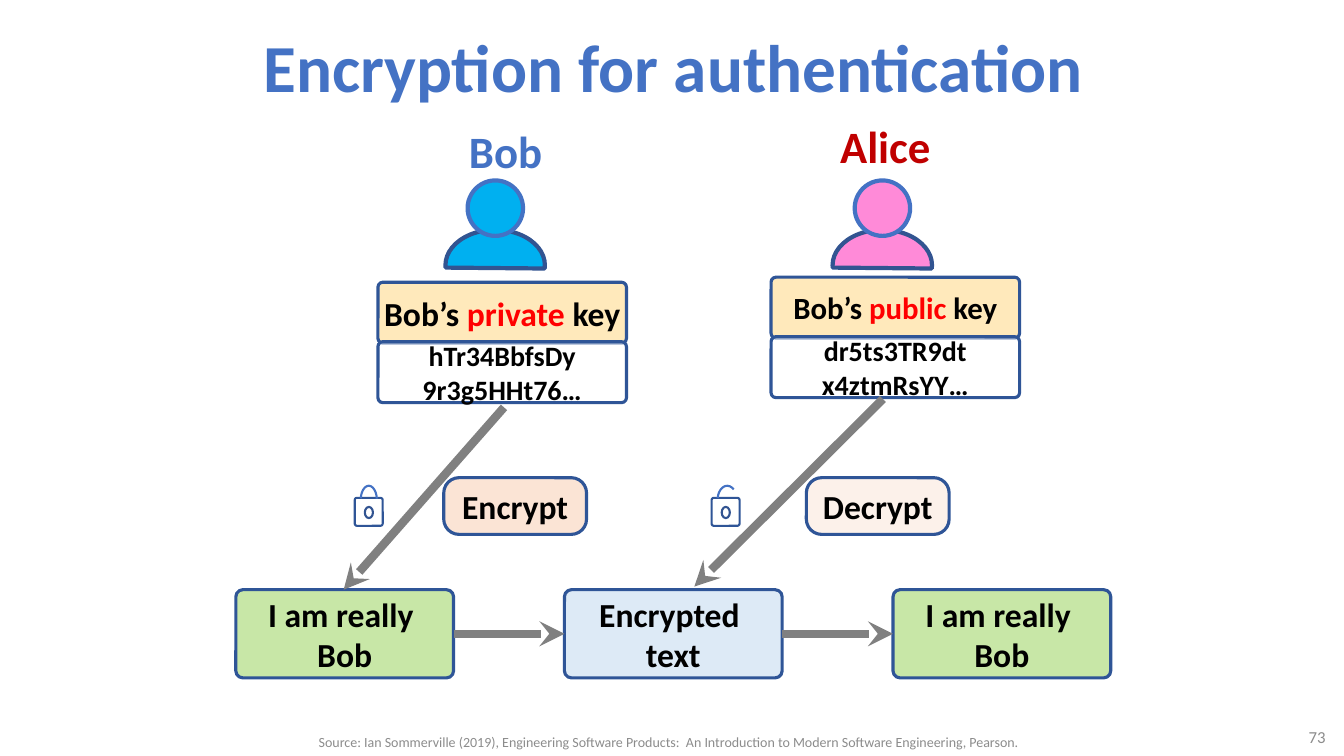
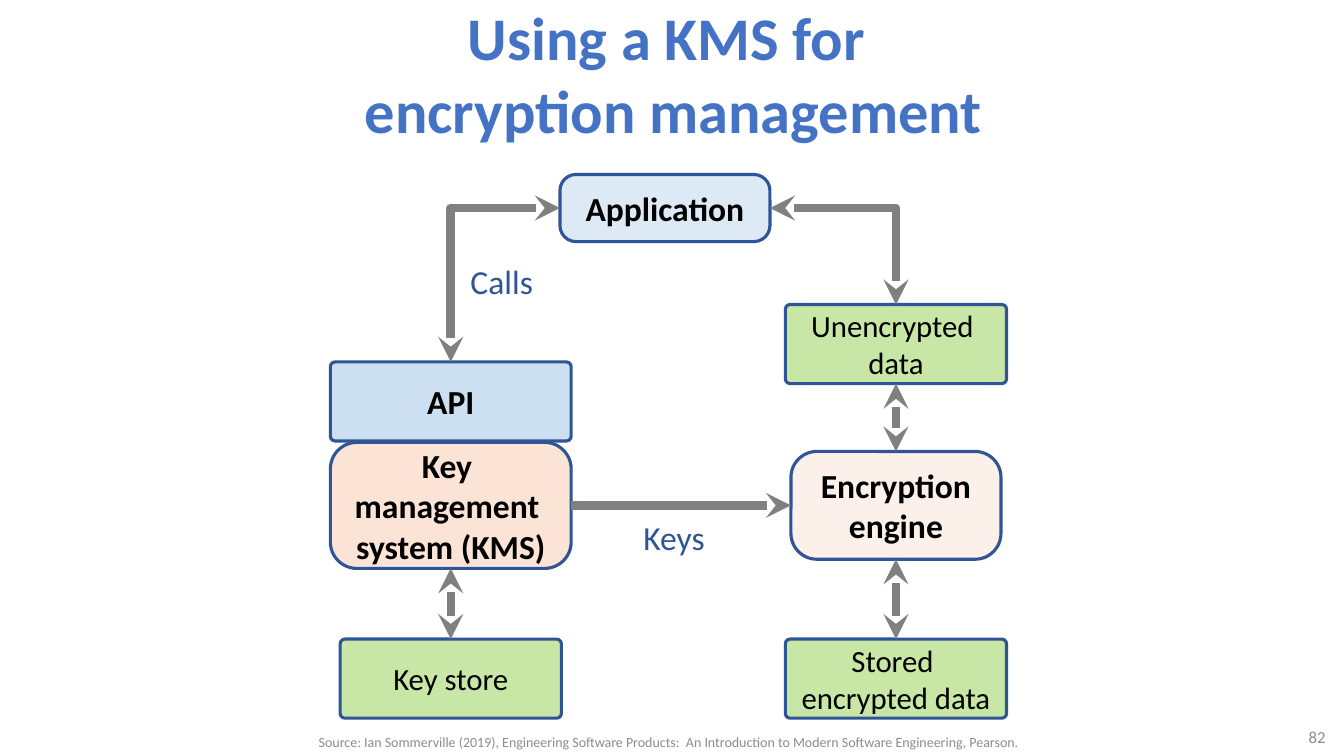
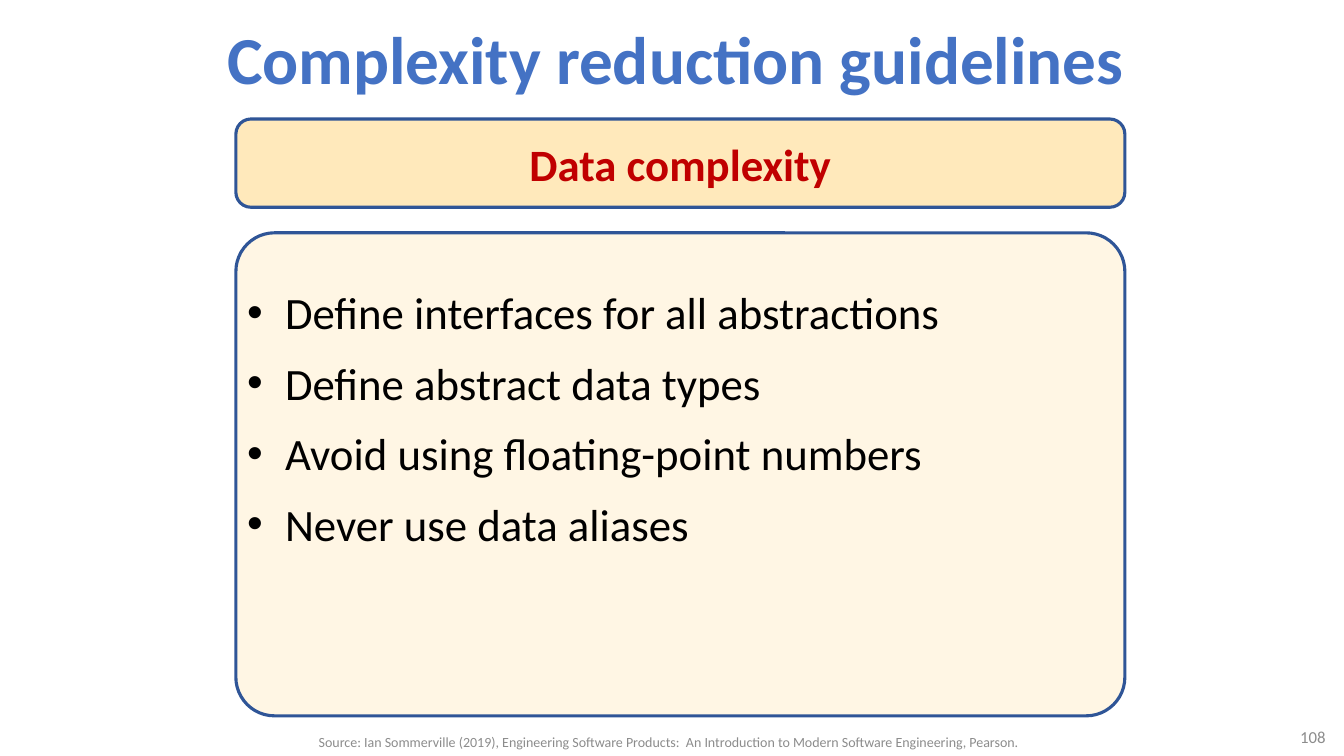
from lxml.etree import SubElement
from pptx import Presentation
from pptx.dml.color import RGBColor
from pptx.enum.shapes import MSO_CONNECTOR, MSO_SHAPE
from pptx.enum.text import MSO_ANCHOR, MSO_AUTO_SIZE, PP_ALIGN
from pptx.oxml.ns import qn
from pptx.util import Pt

FONT = "Calibri"
BLACK = RGBColor(0x00, 0x00, 0x00)
WHITE = RGBColor(0xFF, 0xFF, 0xFF)
GRAY = RGBColor(0x80, 0x80, 0x80)
FOOTER_GRAY = RGBColor(0x8C, 0x8C, 0x8C)
BLUE = RGBColor(0x44, 0x72, 0xC4)
NAVY = RGBColor(0x2F, 0x55, 0x97)
OUTLINE_BLUE = RGBColor(0x32, 0x54, 0x91)
RED = RGBColor(0xFF, 0x00, 0x00)
DARK_RED = RGBColor(0xC0, 0x00, 0x00)
GREEN = RGBColor(0x92, 0xD0, 0x50)
PALE_BLUE = RGBColor(0xBD, 0xD7, 0xEE)
SKY_BLUE = RGBColor(0x9D, 0xC3, 0xE6)
SALMON = RGBColor(0xF8, 0xCB, 0xAD)
PEACH = RGBColor(0xFB, 0xE5, 0xD6)
AMBER = RGBColor(0xFF, 0xD5, 0x79)
CYAN = RGBColor(0x00, 0xB0, 0xF0)
PINK = RGBColor(0xFF, 0x8A, 0xD8)

SOURCE = ("Source: Ian Sommerville (2019), Engineering Software Products:  "
          "An Introduction to Modern Software Engineering, Pearson.")
TOP, LEFT, BOTTOM, RIGHT = range(4)


class Deck:
    """Holds the shared style and the slide being built."""

    def __init__(self):
        self.prs = Presentation()
        self.prs.slide_width, self.prs.slide_height = Pt(960), Pt(540)
        self.shapes = None

    def new_slide(self, title, number, area, size=48):
        slide = self.prs.slides.add_slide(self.prs.slide_layouts[5])
        self.shapes = slide.shapes
        heading = slide.shapes.title
        heading.left, heading.top, heading.width, heading.height = map(Pt, area)
        heading.text_frame.auto_size = MSO_AUTO_SIZE.NONE
        heading.text_frame.vertical_anchor = MSO_ANCHOR.MIDDLE
        self.add_text(heading.text_frame, [title], size, BLUE, True)
        self.label(str(number), (878, 517, 76, 19), 12, FOOTER_GRAY,
                   align=PP_ALIGN.RIGHT, anchor=MSO_ANCHOR.MIDDLE)
        self.label(SOURCE, (168.5, 520, 618, 20), 10, FOOTER_GRAY,
                   anchor=MSO_ANCHOR.MIDDLE)

    def add_text(self, frame, paragraphs, size, color, bold=False,
                 align=PP_ALIGN.CENTER):
        """Each paragraph is a string or a list of (string, color) runs."""
        for index, content in enumerate(paragraphs):
            paragraph = frame.add_paragraph() if index else frame.paragraphs[0]
            paragraph.alignment = align
            runs = [(content, color)] if isinstance(content, str) else content
            for words, run_color in runs:
                for row, line in enumerate(words.split("\n")):
                    if row:
                        paragraph.add_line_break()
                    run = paragraph.add_run()
                    run.text = line
                    run.font.name, run.font.size = FONT, Pt(size)
                    run.font.bold = bold
                    run.font.color.rgb = run_color

    def label(self, words, area, size, color, bold=False,
              align=PP_ALIGN.CENTER, anchor=MSO_ANCHOR.TOP):
        frame = self.shapes.add_textbox(*map(Pt, area)).text_frame
        frame.word_wrap = True
        frame.vertical_anchor = anchor
        self.add_text(frame, [words], size, color, bold, align)

    def figure(self, kind, area, fill, line, weight, adjust=(), opacity=100,
               parent=None):
        """Adds a preset shape to the slide or to the parent group."""
        shape = (parent or self.shapes).add_shape(kind, *map(Pt, area))
        shape.shadow.inherit = False
        for index, value in enumerate(adjust):
            shape.adjustments[index] = value
        if fill is None:
            shape.fill.background()
        else:
            shape.fill.solid()
            shape.fill.fore_color.rgb = fill
            if opacity < 100:
                tint = shape.element.spPr.find(qn("a:solidFill"))[0]
                SubElement(tint, qn("a:alpha"), val=str(opacity * 1000))
        shape.line.color.rgb = line
        shape.line.width = Pt(weight)
        return shape

    def box(self, paragraphs, area, fill, size=24, bold=True, color=BLACK,
            corner=0.08, opacity=50, align=PP_ALIGN.CENTER):
        shape = self.figure(MSO_SHAPE.ROUNDED_RECTANGLE, area, fill, NAVY,
                            2.25, [corner], opacity)
        frame = shape.text_frame
        frame.margin_left = frame.margin_right = 0
        frame.margin_top = frame.margin_bottom = 0
        frame.word_wrap = False
        frame.vertical_anchor = MSO_ANCHOR.MIDDLE
        self.add_text(frame, paragraphs, size, color, bold, align)
        return shape

    def bullet_box(self, items, area, fill, size, top_margin):
        frame = self.box(items, area, fill, size, False, opacity=20,
                         align=PP_ALIGN.LEFT).text_frame
        frame.word_wrap = True
        frame.vertical_anchor = MSO_ANCHOR.TOP
        frame.margin_top = Pt(top_margin)
        for paragraph in frame.paragraphs:
            props = paragraph._p.get_or_add_pPr()
            props.set("marL", str(Pt(27)))
            props.set("indent", str(Pt(-27)))
            SubElement(props, qn("a:buFont"), typeface="Arial")
            SubElement(props, qn("a:buChar"), char="•")
            paragraph.space_after = Pt(12)

    def arrow(self, start=(0, 0), end=(0, 0), kind=MSO_CONNECTOR.STRAIGHT,
              both=False):
        connector = self.shapes.add_connector(kind, *map(Pt, (*start, *end)))
        connector.line.color.rgb = GRAY
        connector.line.width = Pt(6)
        line = connector.element.spPr.find(qn("a:ln"))
        if both:
            SubElement(line, qn("a:headEnd"), type="stealth")
        SubElement(line, qn("a:tailEnd"), type="stealth")
        SubElement(connector.element.spPr, qn("a:effectLst"))
        return connector

    def link(self, origin, origin_side, target, target_side, both=False,
             bent=False):
        """Joins two boxes by an arrow glued to the given sides."""
        kind = MSO_CONNECTOR.ELBOW if bent else MSO_CONNECTOR.STRAIGHT
        connector = self.arrow(kind=kind, both=both)
        connector.begin_connect(origin, origin_side)
        connector.end_connect(target, target_side)
        if bent:
            geometry = connector.element.spPr.find(qn("a:prstGeom"))
            geometry.set("prst", "bentConnector2")

    def person(self, x, y, fill):
        group = self.shapes.add_group_shape().shapes
        self.figure(MSO_SHAPE.CHORD, (x, y + 35.3, 71, 50.4), fill,
                    OUTLINE_BLUE, 3, (106.27, 2.36), parent=group)
        self.figure(MSO_SHAPE.OVAL, (x + 15.8, y, 39.6, 39.6), fill, BLUE, 3,
                    parent=group)

    def padlock(self, x, y, shackle_width, shackle_end):
        group = self.shapes.add_group_shape().shapes
        self.figure(MSO_SHAPE.ROUNDED_RECTANGLE, (x, y + 8.6, 20, 20), WHITE,
                    NAVY, 1.5, [0.08], parent=group)
        self.figure(MSO_SHAPE.OVAL, (x + 7.2, y + 15.1, 5.8, 8), WHITE,
                    OUTLINE_BLUE, 1.5, parent=group)
        self.figure(MSO_SHAPE.ARC, (x + 4.3, y, shackle_width, 20), None, BLUE,
                    1.5, (114.46, shackle_end), parent=group)


def authentication_slide(deck):
    deck.new_slide("Encryption for authentication", 73, (157, 9.4, 648, 75))

    owners = [
        ("Bob", BLUE, (247.7, 85), 318.2, CYAN, (270, 201.6),
         "private", 24, "hTr34BbfsDy\n9r3g5HHt76…"),
        ("Alice", DARK_RED, (519, 81.4), 594.7, PINK, (550.8, 198),
         "public", 22, "dr5ts3TR9dt\nx4ztmRsYY…"),
    ]
    for (name, color, name_at, person_x, fill, (key_x, key_y),
         access, key_size, key) in owners:
        deck.label(name, (*name_at, 227, 46), 32, color, True)
        deck.person(person_x, 128.9, fill)
        heading = [("Bob’s ", BLACK), (access, RED), (" key", BLACK)]
        deck.box([heading], (key_x, key_y, 177.5, 43.5), AMBER, key_size)
        deck.box([key], (key_x, key_y + 42.5, 177.5, 43.5), WHITE, 20)

    steps = [("Encrypt", 317, SALMON), ("Decrypt", 576, PEACH)]
    for step, x, fill in steps:
        deck.box([step], (x, 341.2, 102, 40.5), fill, corner=0.27)
    deck.padlock(253.4, 347, 11.5, 211.45)
    deck.padlock(508.3, 347, 13.7, 181.23)

    messages = [("I am really \nBob", GREEN), ("Encrypted \ntext", PALE_BLUE),
                ("I am really \nBob", GREEN)]
    plain, encrypted, decrypted = [
        deck.box([words], (168.5 + 234.7 * column, 421.2, 155.5, 63), fill)
        for column, (words, fill) in enumerate(messages)]
    deck.link(plain, RIGHT, encrypted, LEFT)
    deck.link(encrypted, RIGHT, decrypted, LEFT)
    deck.arrow((360, 291), (245.5, 421.2))
    deck.arrow((630.7, 285), (496, 419))


def key_management_slide(deck):
    deck.new_slide("Using a KMS for \nencryption management", 82,
                   (157, 9.4, 648, 85), 43.2)

    def centered(center, top, width, height):
        return center - width / 2, top, width, height

    def data_box(words, center, top):
        return deck.box([words], centered(center, top, 158, 56.5), GREEN, 22,
                        False, corner=0.06)

    keys_x, data_x = 322, 640
    application = deck.box(["Application"], centered(475, 124.6, 150, 48),
                           PALE_BLUE, corner=0.24)
    api = deck.box(["API"], centered(keys_x, 258.5, 172, 56.5), SKY_BLUE,
                   corner=0.06)
    kms = deck.box(["Key ", "management ", "system (KMS)"],
                   centered(keys_x, 316, 172, 90), SALMON, corner=0.21)
    engine = deck.box(["Encryption", "engine"],
                      centered(data_x, 322.5, 150, 77), PEACH, corner=0.24)
    key_store = data_box("Key store", keys_x, 456.5)
    unencrypted = data_box("Unencrypted \ndata", data_x, 217.5)
    stored = data_box("Stored \nencrypted data", data_x, 456.5)

    deck.link(application, LEFT, api, TOP, both=True, bent=True)
    deck.link(application, RIGHT, unencrypted, TOP, both=True, bent=True)
    deck.link(kms, RIGHT, engine, LEFT)
    for upper, lower in [(unencrypted, engine), (engine, stored),
                         (kms, key_store)]:
        deck.link(upper, BOTTOM, lower, TOP, both=True)
    deck.label("Calls", (315.4, 183, 86, 36), 24, NAVY)
    deck.label("Keys", (438.5, 365.6, 86, 36), 24, NAVY)


def guidelines_slide(deck):
    deck.new_slide("Complexity reduction guidelines", 108,
                   (139.7, 3.6, 686, 75))
    deck.box(["Data complexity"], (168.5, 85, 635, 63), AMBER, 32,
             color=DARK_RED, corner=0.17)
    deck.bullet_box(["Define interfaces for all abstractions",
                     "Define abstract data types",
                     "Avoid using floating-point numbers",
                     "Never use data aliases"],
                    (168.5, 166.3, 635, 345), AMBER, 32, 29)


def main():
    deck = Deck()
    authentication_slide(deck)
    key_management_slide(deck)
    guidelines_slide(deck)
    deck.prs.save("out.pptx")


if __name__ == "__main__":
    main()
